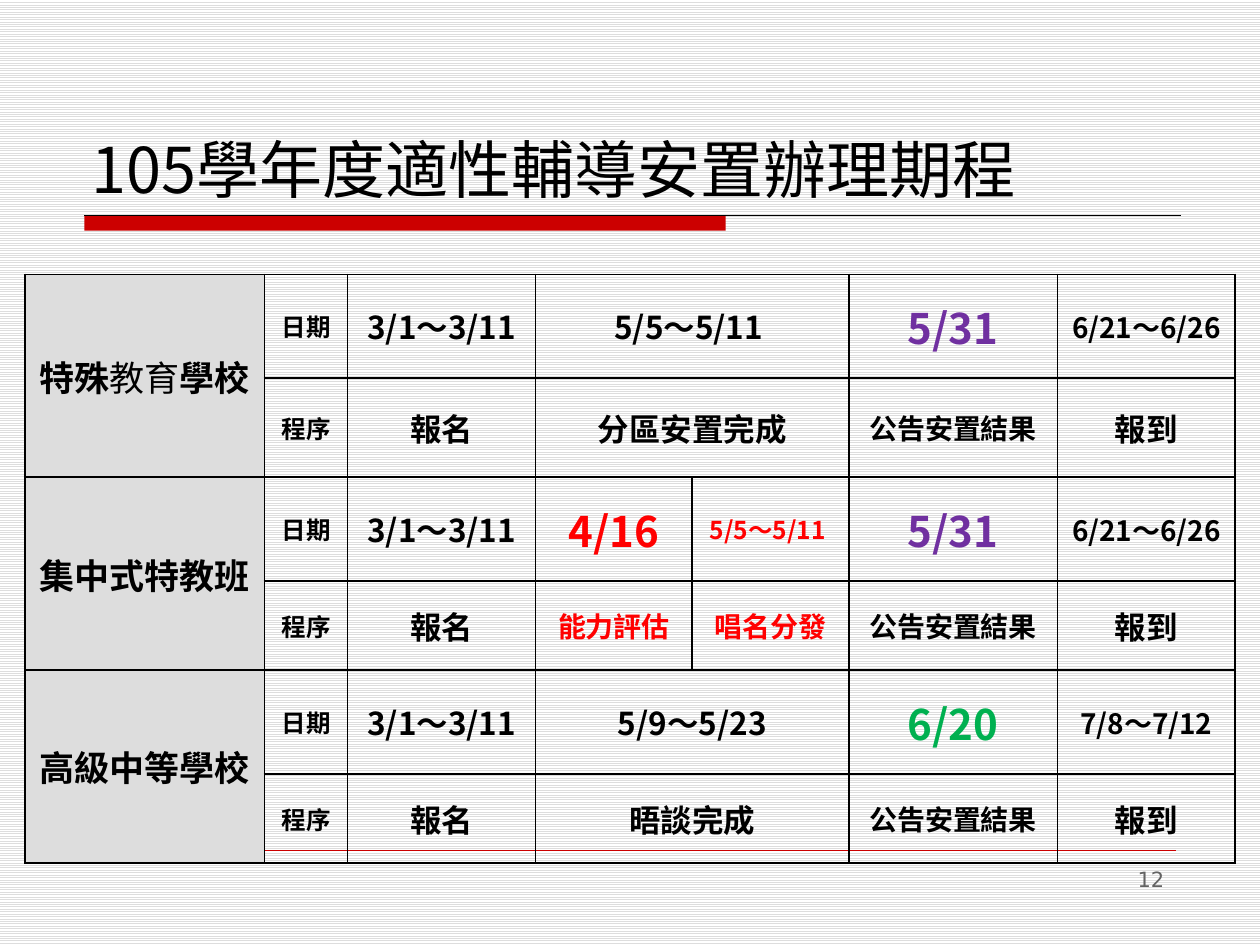
"""Build the 105 school-year placement schedule slide."""
import pptx
import pptx.dml.color
import pptx.enum.dml
import pptx.enum.shapes
import pptx.enum.text
import pptx.oxml
import pptx.oxml.ns
import pptx.util
from lxml import etree

Cm = pptx.util.Cm
Pt = pptx.util.Pt
Align = pptx.enum.text.PP_ALIGN
Anchor = pptx.enum.text.MSO_ANCHOR

THEME = {
    "font": "Noto Sans CJK SC",
    "number_font": "DejaVu Sans",
    "stripe": "DDDDDD",
    "paper": "FFFFFF",
    "accent": "CC0000",
    "ink": "000000",
    "styles": {
        "title": (36, "000000"),
        "page": (12, "636363"),
        "school": (20, "000000"),
        "label": (14, "000000"),
        "main": (18, "000000"),
        "small": (16, "000000"),
        "exam": (24, "FF0000"),
        "red_date": (14, "FF0000"),
        "red_step": (16, "FF0000"),
        "purple": (24, "7030A0"),
        "green": (24, "00B050"),
    },
}

TITLE = "105學年度適性輔導安置辦理期程"
PAGE_NUMBER = "12"
ENROL = ("3/1～3/11", "報名")
RESULT = "公告安置結果"
CHECK_IN = "報到"
SCHOOLS = [
    {
        "name": ("特殊", "教育", "學校"),
        "process": [("5/5～5/11 ", "main", "分區安置完成", "main")],
        "result": ("5/31", "purple"),
        "check_in": "6/21～6/26",
    },
    {
        "name": ("集中式特教班",),
        "process": [
            ("4/16", "exam", "能力評估", "red_step"),
            ("5/5～5/11 ", "red_date", "唱名分發", "red_step"),
        ],
        "result": ("5/31", "purple"),
        "check_in": "6/21～6/26",
    },
    {
        "name": ("高級中等學校",),
        "process": [("5/9～5/23", "main", "晤談完成", "main")],
        "result": ("6/20", "green"),
        "check_in": "7/8～7/12",
    },
]
COLUMN_WIDTHS = [4.83, 1.68, 3.79, 3.15, 3.16, 4.21, 3.58]
ROW_HEIGHTS = [2.09, 2.0, 2.09, 1.8, 2.09, 1.8]
HANGING = Cm(1.3)


def color(value):
    return pptx.dml.color.RGBColor.from_string(value)


def format_run(run, style, bold=False, font=THEME["font"]):
    size, ink = THEME["styles"][style]
    run.font.size = Pt(size)
    run.font.bold = bold
    run.font.name = font
    run.font.color.rgb = color(ink)
    east_asian = pptx.oxml.ns.qn("a:ea")
    run.font._element.find(pptx.oxml.ns.qn("a:latin")).addnext(
        etree.Element(east_asian, typeface=font)
    )


def add_text(slide, box, text, style, align, anchor, font):
    shape = slide.shapes.add_textbox(*map(Cm, box))
    text_frame = shape.text_frame
    text_frame.word_wrap = True
    text_frame.vertical_anchor = anchor
    text_frame.text = text
    paragraph = text_frame.paragraphs[0]
    paragraph.alignment = align
    format_run(paragraph.runs[0], style, font=font)


def add_rule(slide, left, right, top, ink, width):
    straight = pptx.enum.shapes.MSO_CONNECTOR.STRAIGHT
    rule = slide.shapes.add_connector(straight, Cm(left), Cm(top), Cm(right), Cm(top))
    rule.line.color.rgb = color(ink)
    rule.line.width = Pt(width)
    etree.SubElement(rule._element.spPr, pptx.oxml.ns.qn("a:effectLst"))


def add_borders(cell):
    properties = cell._tc.get_or_add_tcPr()
    for side in ("lnL", "lnR", "lnT", "lnB"):
        line = etree.SubElement(properties, pptx.oxml.ns.qn("a:" + side), w=str(Pt(1)))
        fill = etree.SubElement(line, pptx.oxml.ns.qn("a:solidFill"))
        etree.SubElement(fill, pptx.oxml.ns.qn("a:srgbClr"), val=THEME["ink"])


def fill_cell(cell, parts, style):
    cell.vertical_anchor = Anchor.MIDDLE
    paragraph = cell.text_frame.paragraphs[0]
    paragraph.text = parts[0]
    for part in parts[1:]:
        paragraph.add_run().text = part
    paragraph.alignment = Align.CENTER
    properties = paragraph._p.get_or_add_pPr()
    properties.set("marL", str(HANGING))
    properties.set("indent", str(-HANGING))
    for index, run in enumerate(paragraph.runs):
        format_run(run, style, bold=index % 2 == 0)


def fill_school(table, top, school):
    table.cell(top, 0).merge(table.cell(top + 1, 0))
    fill_cell(table.cell(top, 0), school["name"], "school")
    process = school["process"]
    if len(process) == 1:
        for row in (top, top + 1):
            table.cell(row, 3).merge(table.cell(row, 4))
    dates = [(1, "日期", "label"), (2, ENROL[0], "main"),
             (5, *school["result"]), (6, school["check_in"], "small")]
    steps = [(1, "程序", "label"), (2, ENROL[1], "main"),
             (5, RESULT, "small"), (6, CHECK_IN, "main")]
    for column, (date, date_style, step, step_style) in enumerate(process, 3):
        dates.append((column, date, date_style))
        steps.append((column, step, step_style))
    for row, entries in enumerate((dates, steps), top):
        for column, text, style in entries:
            fill_cell(table.cell(row, column), (text,), style)


def add_schedule(slide):
    frame = slide.shapes.add_table(
        len(ROW_HEIGHTS), len(COLUMN_WIDTHS), Cm(0.5), Cm(5.53),
        Cm(sum(COLUMN_WIDTHS)), Cm(sum(ROW_HEIGHTS)),
    )
    table = frame.table
    table.first_row = table.horz_banding = False
    for column, width in zip(table.columns, COLUMN_WIDTHS):
        column.width = Cm(width)
    for row, height in zip(table.rows, ROW_HEIGHTS):
        row.height = Cm(height)
        for index, cell in enumerate(row.cells):
            add_borders(cell)
            if index == 0:
                cell.fill.solid()
                cell.fill.fore_color.rgb = color(THEME["stripe"])
            else:
                cell.fill.background()
    for index, school in enumerate(SCHOOLS):
        fill_school(table, index * 2, school)


def main():
    presentation = pptx.Presentation()
    presentation.slide_width, presentation.slide_height = Cm(25.4), Cm(19.05)
    slide = presentation.slides.add_slide(presentation.slide_layouts[6])
    background = slide.background.fill
    background.patterned()
    background.pattern = pptx.enum.dml.MSO_PATTERN.LIGHT_HORIZONTAL
    background.fore_color.rgb = color(THEME["stripe"])
    background.back_color.rgb = color(THEME["paper"])

    bar = slide.shapes.add_shape(
        pptx.enum.shapes.MSO_SHAPE.RECTANGLE, Cm(1.7), Cm(4.34), Cm(12.93), Cm(0.31)
    )
    bar.shadow.inherit = False
    bar.fill.solid()
    bar.fill.fore_color.rgb = color(THEME["accent"])
    bar.line.fill.background()
    add_rule(slide, 1.7, 23.8, 4.34, THEME["ink"], 0.75)
    add_rule(slide, 1.7, 23.7, 17.15, THEME["accent"], 0.25)

    add_text(slide, (1.6, 0.91, 22.23, 3.38), TITLE, "title",
             Align.LEFT, Anchor.BOTTOM, THEME["font"])
    add_schedule(slide)
    add_text(slide, (18.21, 17.35, 5.51, 1.32), PAGE_NUMBER, "page",
             Align.RIGHT, Anchor.TOP, THEME["number_font"])
    presentation.save("out.pptx")


if __name__ == "__main__":
    main()
